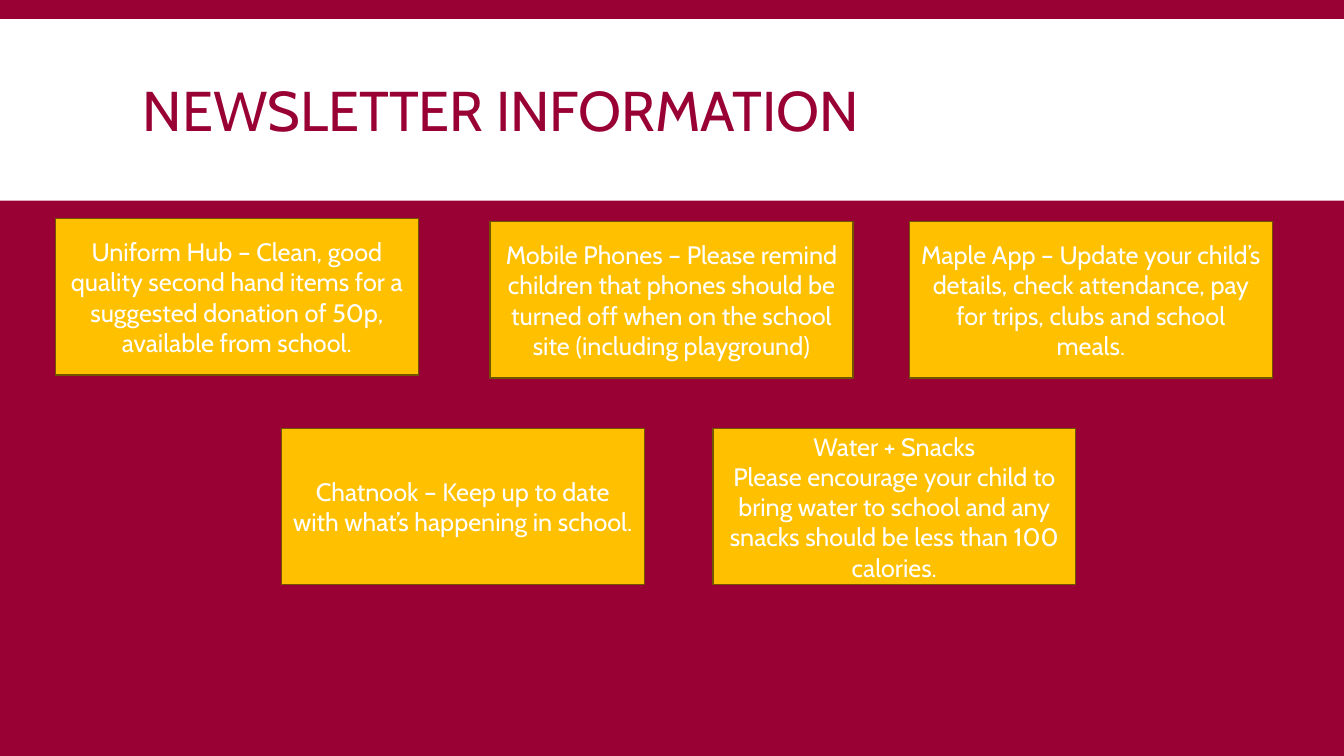
import pptx
import pptx.util
import pptx.dml.color
import pptx.enum.shapes
import pptx.enum.text
from dataclasses import dataclass

Inches = pptx.util.Inches
Pt = pptx.util.Pt
RGB = pptx.dml.color.RGBColor.from_string
Align = pptx.enum.text.PP_ALIGN


@dataclass(frozen=True)
class Theme:
    font: str = "Cabin"
    maroon: str = "990033"
    white: str = "FFFFFF"
    gold: str = "FFC000"
    card_edge: str = "705400"
    title_size: int = 40
    card_size: int = 18


THEME = Theme()
SLIDE_WIDTH, SLIDE_HEIGHT = 13.33, 7.5
CARD_WIDTH, CARD_HEIGHT = 3.6, 1.55

# Left, top and paragraphs of each notice
NOTICES = [
    (0.55, 2.17, ["Uniform Hub – Clean, good quality second hand items for a "
                  "suggested donation of 50p, available from school."]),
    (4.86, 2.2, ["Mobile Phones – Please remind children that phones should be "
                 "turned off when on the school site (including playground)"]),
    (9.02, 2.2, ["Maple App – Update your child’s details, check attendance, "
                 "pay for trips, clubs and school meals."]),
    (2.79, 4.25, ["Chatnook – Keep up to date with what’s happening in school."]),
    (7.07, 4.25, ["Water + Snacks",
                  "Please encourage your child to bring water to school and any "
                  "snacks should be less than 100 calories."]),
]


def apply_format(target, values):
    for attribute, value in values.items():
        setattr(target, attribute, value)


def write_text(frame, paragraphs, size, color, paragraph_format):
    apply_format(frame, {
        "word_wrap": True,
        "vertical_anchor": pptx.enum.text.MSO_ANCHOR.MIDDLE,
    })
    frame.text = "\n".join(paragraphs)
    for paragraph in frame.paragraphs:
        apply_format(paragraph, paragraph_format)
        for run in paragraph.runs:
            apply_format(run.font, {"name": THEME.font, "size": Pt(size)})
            run.font.color.rgb = RGB(color)


def add_panel(slide, left, top, width, height, fill, edge=None):
    panel = slide.shapes.add_shape(
        pptx.enum.shapes.MSO_SHAPE.RECTANGLE,
        Inches(left), Inches(top), Inches(width), Inches(height))
    panel.shadow.inherit = False
    panel.fill.solid()
    panel.fill.fore_color.rgb = RGB(fill)
    if edge:
        panel.line.color.rgb = RGB(edge)
        panel.line.width = Pt(1)
    else:
        panel.line.fill.background()
    return panel


def add_title(slide, wording):
    title = slide.shapes.add_textbox(
        Inches(1.32), Inches(0.31), Inches(10.7), Inches(1.65))
    write_text(title.text_frame, [wording], THEME.title_size, THEME.maroon,
               {"line_spacing": 0.85})


def add_notice(slide, left, top, paragraphs):
    card = add_panel(slide, left, top, CARD_WIDTH, CARD_HEIGHT,
                     THEME.gold, THEME.card_edge)
    write_text(card.text_frame, paragraphs, THEME.card_size, THEME.white,
               {"alignment": Align.CENTER})


def main():
    deck = pptx.Presentation()
    apply_format(deck, {"slide_width": Inches(SLIDE_WIDTH),
                        "slide_height": Inches(SLIDE_HEIGHT)})
    slide = deck.slides.add_slide(deck.slide_layouts[6])

    # Background and title band
    slide.background.fill.solid()
    slide.background.fill.fore_color.rgb = RGB(THEME.maroon)
    add_panel(slide, 0, 0.19, SLIDE_WIDTH, 1.8, THEME.white)
    add_title(slide, "NEWSLETTER INFORMATION")

    # Notices
    for left, top, paragraphs in NOTICES:
        add_notice(slide, left, top, paragraphs)

    deck.save("out.pptx")


if __name__ == "__main__":
    main()
